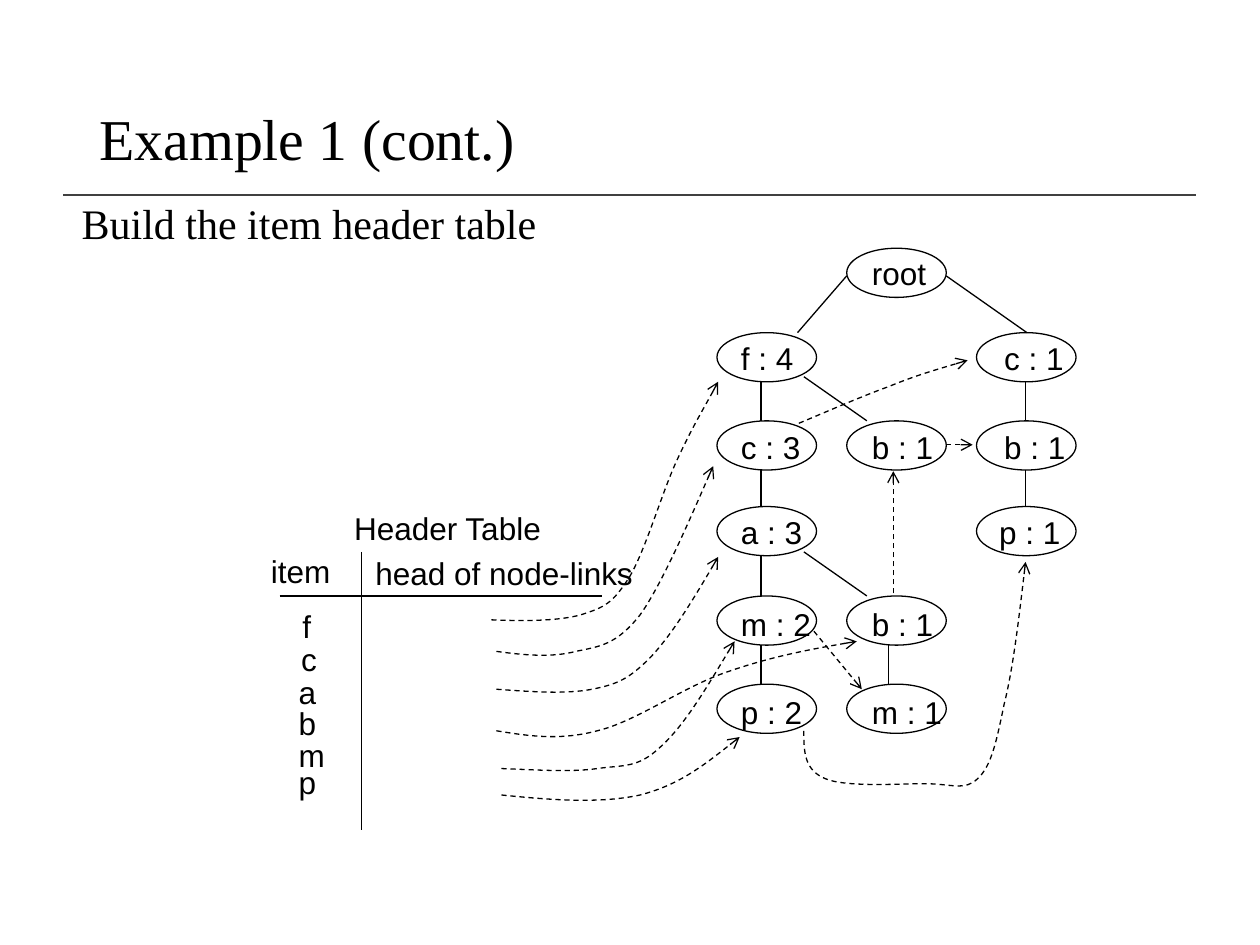
import pptx
import pptx.dml.color
import pptx.enum.dml
import pptx.enum.shapes
import pptx.enum.text
import pptx.oxml
import pptx.oxml.ns
import pptx.util
from pptx.util import Inches

BLACK = "000000"
NODE_WIDTH, NODE_HEIGHT = 0.79, 0.39
COLUMN_STEP = 1.03
ROW_TOPS = [0, 0.67, 1.37, 2.05, 2.76, 3.46]
LABEL_DROPS = [0.05, 0.05, 0.06, 0.05, 0.07, 0.07]

# Text, column, row, left inset of the label
NODES = [
    ("root", 1, 0, 0.2),
    ("f : 4", 0, 1, 0.19), ("c : 3", 0, 2, 0.19), ("a : 3", 0, 3, 0.19),
    ("m : 2", 0, 4, 0.19), ("p : 2", 0, 5, 0.19),
    ("b : 1", 1, 2, 0.2), ("b : 1", 1, 4, 0.2), ("m : 1", 1, 5, 0.2),
    ("c : 1", 2, 1, 0.22), ("b : 1", 2, 2, 0.22), ("p : 1", 2, 3, 0.18),
]
# Edge position, first row, last row of each straight branch
BRANCHES = [(0.35, 1, 5), (1.36, 4, 5), (2.45, 1, 3)]
SLANTED_EDGES = [
    ((1.03, 0.22), (0.64, 0.67)), ((1.82, 0.22), (2.46, 0.67)),
    ((0.69, 1.02), (1.19, 1.37)), ((0.69, 2.41), (1.19, 2.76)),
]
# Start point, then two control points and an end point for every segment
CURVED_LINKS = [
    # Header table to first node of each item: f, c, a, b, m, p
    [(0.9, 2.92), (1.16, 2.93), (1.43, 2.93), (1.61, 2.88),
     (1.8, 2.82), (1.86, 2.79), (1.99, 2.59),
     (2.12, 2.38), (2.25, 1.92), (2.37, 1.66), (2.49, 1.4), (2.6, 1.22), (2.7, 1.03)],
    [(0.94, 3.17), (1.16, 3.2), (1.38, 3.22), (1.57, 3.17),
     (1.76, 3.13), (1.89, 3.12), (2.08, 2.88), (2.26, 2.63), (2.57, 1.9), (2.66, 1.7)],
    [(0.94, 3.47), (1.22, 3.49), (1.49, 3.51), (1.7, 3.47),
     (1.9, 3.43), (1.99, 3.39), (2.16, 3.22), (2.33, 3.04), (2.52, 2.73), (2.7, 2.42)],
    [(0.94, 3.8), (1.19, 3.84), (1.44, 3.88), (1.74, 3.8),
     (2.04, 3.73), (2.41, 3.46), (2.75, 3.34), (3.09, 3.22), (3.44, 3.15), (3.8, 3.09)],
    [(0.98, 4.1), (1.26, 4.11), (1.53, 4.13), (1.74, 4.1),
     (1.95, 4.07), (2.06, 4.1), (2.24, 3.93), (2.43, 3.76), (2.63, 3.42), (2.83, 3.09)],
    [(0.98, 4.31), (1.37, 4.35), (1.76, 4.38), (2.08, 4.31),
     (2.39, 4.23), (2.63, 4.04), (2.87, 3.85)],
    # Between nodes: c to c, p to p
    [(3.34, 1.36), (3.58, 1.26), (3.83, 1.15), (4.05, 1.07),
     (4.27, 0.98), (4.48, 0.92), (4.68, 0.86)],
    [(3.38, 3.8), (3.38, 3.96), (3.38, 4.11), (3.55, 4.18),
     (3.71, 4.25), (4.14, 4.22), (4.34, 4.22), (4.55, 4.22), (4.66, 4.28), (4.76, 4.18),
     (4.87, 4.08), (4.91, 3.88), (4.97, 3.59), (5.04, 3.31), (5.09, 2.88), (5.14, 2.46)],
]
# Between nodes: m to m, b to b, b to b
STRAIGHT_LINKS = [
    ((3.46, 3.01), (3.84, 3.47)),
    ((4.09, 2.71), (4.09, 1.74)),
    ((4.51, 1.53), (4.72, 1.53)),
]


def color(value):
    return pptx.dml.color.RGBColor.from_string(value)


def set_text(shape, text, size=18, font="Arial", fill=BLACK, margin=0, spacing=None):
    frame = shape.text_frame
    frame.word_wrap = True
    if margin is not None:
        frame.margin_left = frame.margin_right = Inches(margin)
        frame.margin_top = frame.margin_bottom = Inches(margin)
    paragraph = frame.paragraphs[0]
    paragraph.alignment = pptx.enum.text.PP_ALIGN.LEFT
    paragraph.line_spacing = spacing
    run = paragraph.add_run()
    run.text = text
    run.font.size = pptx.util.Pt(size)
    run.font.name = font
    run.font.color.rgb = color(fill)


def add_text(slide, text, left, top, width, height=0.3, **style):
    box = slide.shapes.add_textbox(Inches(left), Inches(top), Inches(width), Inches(height))
    set_text(box, text, **style)
    box.text_frame.auto_size = pptx.enum.text.MSO_AUTO_SIZE.SHAPE_TO_FIT_TEXT


def style_line(shape, fill=BLACK, width=0.75, link=False):
    line = shape.line
    line.color.rgb = color(fill)
    line.width = pptx.util.Pt(width)
    if link:
        line.dash_style = pptx.enum.dml.MSO_LINE.DASH
        tail = pptx.oxml.parse_xml(
            f'<a:tailEnd {pptx.oxml.ns.nsdecls("a")} type="arrow"/>')
        line._get_or_add_ln().append(tail)


def add_line(slide, left, top, start, end, **style):
    connector = slide.shapes.add_connector(
        pptx.enum.shapes.MSO_CONNECTOR.STRAIGHT,
        Inches(left + start[0]), Inches(top + start[1]),
        Inches(left + end[0]), Inches(top + end[1]))
    style_line(connector, **style)
    effects = pptx.oxml.parse_xml(f'<a:effectLst {pptx.oxml.ns.nsdecls("a")}/>')
    connector._element.spPr.append(effects)


def add_curve(slide, left, top, points):
    places = [(Inches(left + x), Inches(top + y)) for x, y in points]
    builder = slide.shapes.build_freeform(*places[0])
    builder.add_line_segments(places[1:], close=False)
    shape = builder.convert_to_shape()
    shape.fill.background()
    shape.shadow.inherit = False
    style_line(shape, link=True)
    # Turn each three straight segments into one Bezier segment
    qn = pptx.oxml.ns.qn
    segments = list(shape._element.iter(qn("a:lnTo")))
    for index in range(0, len(segments), 3):
        first, second, third = segments[index:index + 3]
        first.tag = qn("a:cubicBezTo")
        for segment in (second, third):
            first.append(segment[0])
            segment.getparent().remove(segment)


def draw_heading(slide, left, top):
    add_line(slide, left, top, (0, 1.15), (8.99, 1.15), fill="404040", width=1)
    title = slide.shapes.title
    title.left, title.top = Inches(left + 0.19), Inches(top)
    title.width, title.height = Inches(8.62), Inches(1.45)
    title.text_frame.vertical_anchor = pptx.enum.text.MSO_ANCHOR.MIDDLE
    set_text(title, "Example 1 (cont.)", size=33, font="Times New Roman",
             margin=None, spacing=0.9)
    add_text(slide, "Build the item header table", left + 0.05, top + 1.12, 6.38, 0.5,
             size=24, font="Times New Roman", margin=None)


def draw_header_table(slide, left, top):
    add_line(slide, left, top, (0.22, 0.73), (2.78, 0.73))
    add_line(slide, left, top, (0.87, 0.38), (0.87, 2.59))
    labels = [
        ("Header Table", 0.81, 0.04, 1.51), ("item", 0.15, 0.38, 0.66),
        ("head of node-links", 0.98, 0.4, 2.14),
        ("f", 0.4, 0.82, 0.23), ("c", 0.39, 1.08, 0.23), ("a", 0.37, 1.34, 0.23),
        ("b", 0.37, 1.59, 0.23), ("m", 0.37, 1.84, 0.23), ("p", 0.37, 2.06, 0.4),
    ]
    for text, x, y, width in labels:
        add_text(slide, text, left + x, top + y, width)


def draw_tree(slide, left, top):
    # Edges
    for x, first, last in BRANCHES:
        for row in range(first, last):
            add_line(slide, left, top, (x, ROW_TOPS[row] + NODE_HEIGHT), (x, ROW_TOPS[row + 1]))
    for start, end in SLANTED_EDGES:
        add_line(slide, left, top, start, end)
    # Nodes and their labels
    for text, column, row, inset in NODES:
        x, y = left + column * COLUMN_STEP, top + ROW_TOPS[row]
        node = slide.shapes.add_shape(
            pptx.enum.shapes.MSO_SHAPE.OVAL,
            Inches(x), Inches(y), Inches(NODE_WIDTH), Inches(NODE_HEIGHT))
        node.fill.background()
        node.shadow.inherit = False
        style_line(node)
        add_text(slide, text, x + inset, y + LABEL_DROPS[row], 0.62)


def draw_node_links(slide, left, top):
    for points in CURVED_LINKS:
        add_curve(slide, left, top, points)
    for start, end in STRAIGHT_LINKS:
        add_line(slide, left, top, start, end, link=True)


def main():
    presentation = pptx.Presentation()
    presentation.slide_width, presentation.slide_height = Inches(10), Inches(7.5)
    slide = presentation.slides.add_slide(presentation.slide_layouts[5])
    draw_heading(slide, 0.5, 0.4)
    draw_header_table(slide, 2, 4)
    draw_tree(slide, 5.69, 1.97)
    draw_node_links(slide, 3, 2)
    presentation.save("out.pptx")


if __name__ == "__main__":
    main()
